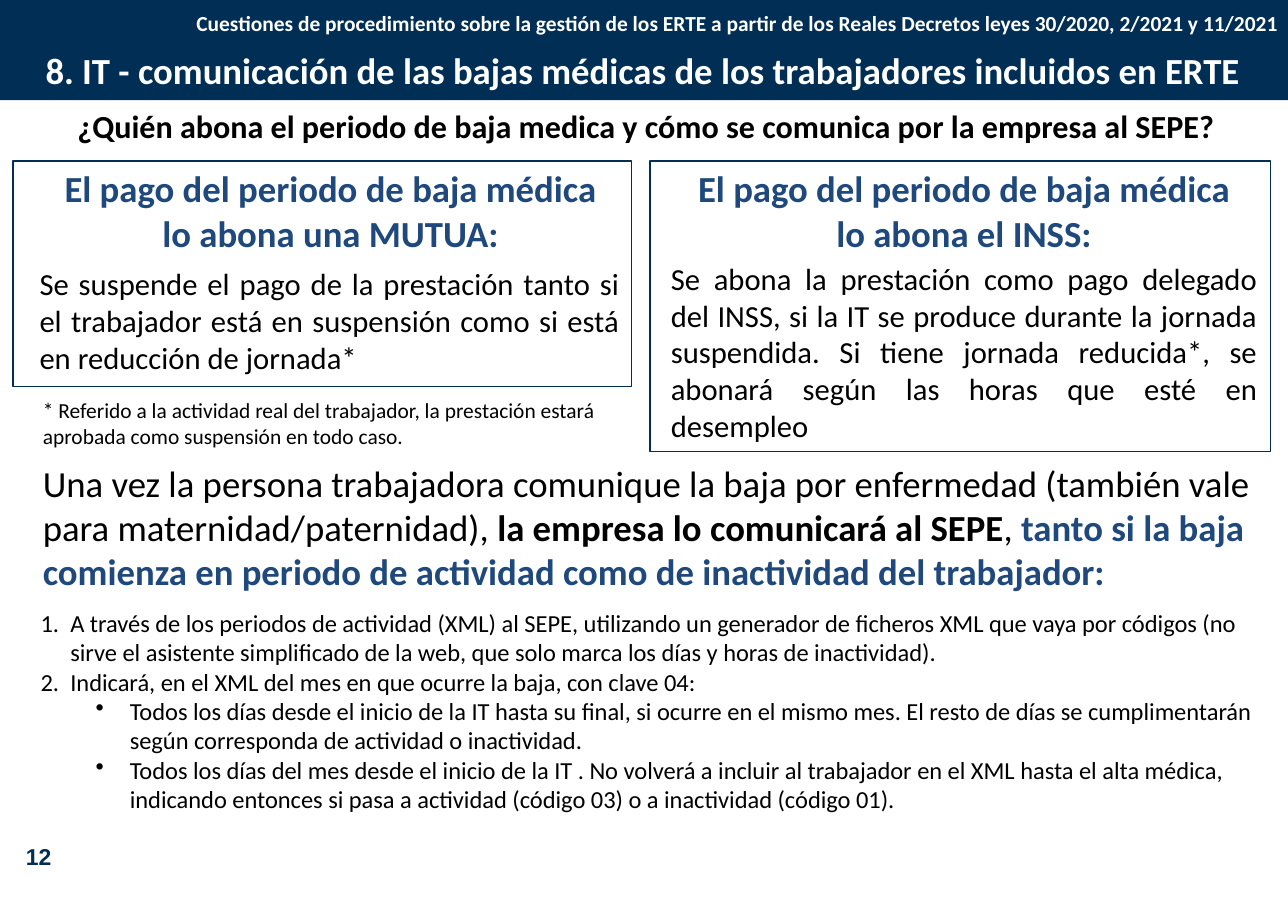
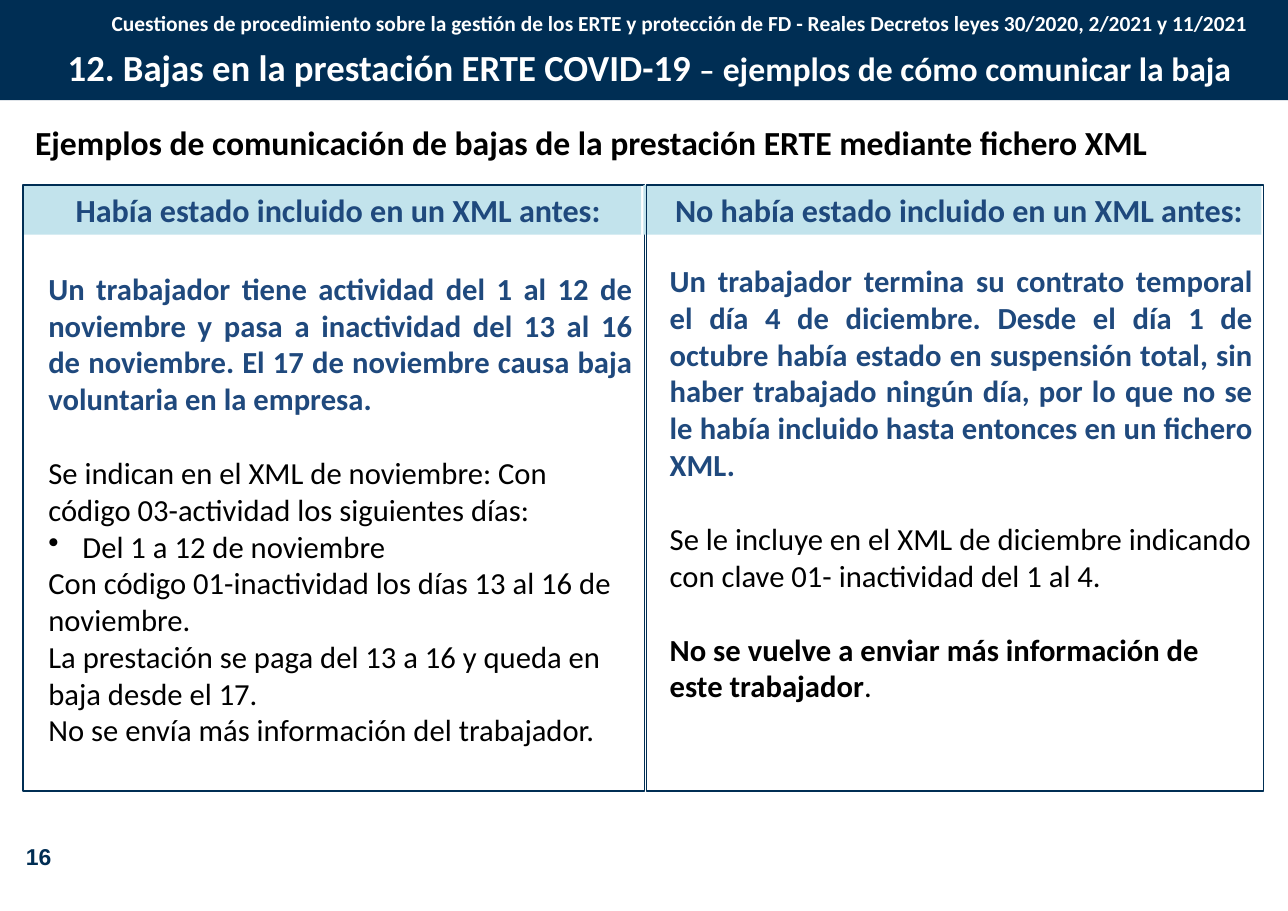
import lxml.etree
import pptx
import pptx.dml.color
import pptx.enum.shapes
import pptx.enum.text
import pptx.oxml.ns
import pptx.util

COLOURS = {"navy": "002E54", "blue": "1F497D", "sky": "C2E3EC", "white": "FFFFFF", "black": "000000"}
ALIGN = pptx.enum.text.PP_ALIGN
ANCHOR = pptx.enum.text.MSO_ANCHOR


class Deck:
    """Hold the shared style and the current slide, and draw each kind of element."""

    SCALE = 9144
    WIDTH, HEIGHT = 1169, 827
    STYLE = {"size": 20, "name": "Calibri", "bold": False, "colour": "black"}
    BULLETS = {"number": ("buAutoNum", "type", "arabicPeriod"), "dot": ("buChar", "char", "•")}

    def __init__(self):
        self.presentation = pptx.Presentation()
        self.presentation.slide_width = self.emu(self.WIDTH)
        self.presentation.slide_height = self.emu(self.HEIGHT)
        self.slide = None

    def emu(self, pixels):
        return pptx.util.Emu(pixels * self.SCALE)

    def colour(self, name):
        return pptx.dml.color.RGBColor.from_string(COLOURS[name])

    def place(self, shape, box):
        for name, value in zip(("left", "top", "width", "height"), box):
            setattr(shape, name, self.emu(value))

    def start(self, title, title_box, header, header_width, number):
        self.slide = self.presentation.slides.add_slide(self.presentation.slide_layouts[5])
        band = self.rectangle((0, 0, self.WIDTH, 91), fill="navy")
        self.slide.shapes.element.insert(2, band.element)
        heading = {"colour": "white", "bold": True}
        self.place(self.slide.shapes.title, title_box)
        self.set_text(self.slide.shapes.title, [title], margins=(13, 6, 13, 6), size=24, align=ALIGN.CENTER, **heading)
        self.text((0, 3, header_width, 36), [header], margins=(8, 6, 8, 6), size=14, align=ALIGN.RIGHT, **heading)
        page = self.rectangle((0, 755, 70, 44), fill="white")
        self.set_text(page, [number], margins=(12, 6, 12, 6), anchor=ANCHOR.MIDDLE, align=ALIGN.CENTER,
                      size=15, name="Arial", bold=True, colour="navy")

    def rectangle(self, box, fill=None, line=None):
        shape = self.slide.shapes.add_shape(
            pptx.enum.shapes.MSO_SHAPE.RECTANGLE, *[self.emu(value) for value in box])
        shape.shadow.inherit = False
        if fill:
            shape.fill.solid()
            shape.fill.fore_color.rgb = self.colour(fill)
        else:
            shape.fill.background()
        if line:
            shape.line.color.rgb = self.colour(line)
            shape.line.width = pptx.util.Pt(1)
        else:
            shape.line.fill.background()
        return shape

    def text(self, box, paragraphs, **style):
        shape = self.slide.shapes.add_textbox(*[self.emu(value) for value in box])
        self.set_text(shape, paragraphs, **style)

    def bar(self, box, words, **style):
        self.set_text(self.rectangle(box, fill="sky"), [words], **style)

    def set_text(self, shape, paragraphs, margins=(10, 5, 10, 5), anchor=ANCHOR.TOP, **style):
        frame = shape.text_frame
        values = {"word_wrap": True, "auto_size": pptx.enum.text.MSO_AUTO_SIZE.NONE, "vertical_anchor": anchor}
        sides = ("margin_left", "margin_top", "margin_right", "margin_bottom")
        values.update(zip(sides, map(self.emu, margins)))
        for name, value in values.items():
            setattr(frame, name, value)
        for index, item in enumerate(paragraphs):
            runs, changes = item if isinstance(item, tuple) else (item, {})
            paragraph = frame.add_paragraph() if index else frame.paragraphs[0]
            self.fill_paragraph(paragraph, runs, {**self.STYLE, **style, **changes})

    def fill_paragraph(self, paragraph, runs, style):
        properties = paragraph._p.get_or_add_pPr()
        properties.set("marL", str(self.emu(style.get("indent", 0))))
        properties.set("indent", str(-self.emu(style.get("hanging", 0))))
        if "bullet" in style:
            tag, attribute, value = self.BULLETS[style["bullet"]]
            bullet = lxml.etree.SubElement(properties, pptx.oxml.ns.qn("a:" + tag))
            bullet.set(attribute, value)
        values = {
            "alignment": style.get("align", ALIGN.LEFT),
            "level": style.get("level", 0),
            "space_before": pptx.util.Pt(style.get("before", 0)),
        }
        for name, value in values.items():
            setattr(paragraph, name, value)
        for part in [runs] if isinstance(runs, str) else runs:
            words, changes = part if isinstance(part, tuple) else (part, {})
            self.add_run(paragraph, words, {**style, **changes})

    def add_run(self, paragraph, words, style):
        run = paragraph.add_run()
        run.text = words
        values = {"size": pptx.util.Pt(style["size"]), "name": style["name"], "bold": style["bold"]}
        for name, value in values.items():
            setattr(run.font, name, value)
        run.font.color.rgb = self.colour(style["colour"])


STRONG = {"colour": "blue", "bold": True}
HEADING = {**STRONG, "align": ALIGN.CENTER, "indent": 12}
JUSTIFIED = {"align": ALIGN.JUSTIFY, "indent": 12}
CASE = {**STRONG, **JUSTIFIED}
GAP = {"before": 24.4}
NUMBERED = {"indent": 39, "hanging": 27, "bullet": "number"}
DOTTED = {"indent": 93, "hanging": 31, "bullet": "dot", "level": 1}


def sick_leave(deck):
    """Build the slide on reporting sick leave."""
    deck.start("8. IT - comunicación de las bajas médicas de los trabajadores incluidos en ERTE",
               (0, 37, 1167, 53),
               "Cuestiones de procedimiento sobre la gestión de los ERTE a partir de los "
               "Reales Decretos leyes 30/2020, 2/2021 y 11/2021", 1169, "12")
    deck.text((4, 91, 1165, 48),
              ["¿Quién abona el periodo de baja medica y cómo se comunica por la empresa al SEPE?"],
              margins=(13, 6, 13, 6), size=21, bold=True, align=ALIGN.CENTER)
    payers = [
        ("lo abona una MUTUA:", (15, 146, 558, 91), (14, 236, 558, 111), (12, 146, 561, 205),
         "Se suspende el pago de la prestación tanto si el trabajador está en suspensión como si está "
         "en reducción de jornada*"),
        ("lo abona el INSS:", (587, 146, 564, 91), (587, 231, 564, 178), (590, 146, 563, 264),
         "Se abona la prestación como pago delegado del INSS, si la IT se produce durante la jornada "
         "suspendida. Si tiene jornada reducida*, se abonará según las horas que esté en desempleo"),
    ]
    for payer, heading_box, body_box, frame_box, body in payers:
        deck.text(heading_box, ["El pago del periodo de baja médica", payer], size=24, **HEADING)
        deck.text(body_box, [body], **JUSTIFIED)
        deck.rectangle(frame_box, line="navy")
    deck.text((17, 356, 558, 57),
              ["* Referido a la actividad real del trabajador, la prestación estará aprobada como "
               "suspensión en todo caso."], size=14, indent=12)
    deck.text((17, 413, 1152, 131), [[
        "Una vez la persona trabajadora comunique la baja por enfermedad (también vale para "
        "maternidad/paternidad), ",
        ("la empresa lo comunicará al SEPE", {"bold": True}),
        ", ",
        ("tanto si la baja comienza en periodo de actividad como de inactividad del trabajador:", STRONG),
    ]], size=24, indent=12)
    deck.text((15, 547, 1136, 199), [
        ("A través de los periodos de actividad (XML) al SEPE, utilizando un generador de ficheros XML "
         "que vaya por códigos (no sirve el asistente simplificado de la web, que solo marca los días y "
         "horas de inactividad).", NUMBERED),
        ("Indicará, en el XML del mes en que ocurre la baja, con clave 04:", NUMBERED),
        ("Todos los días desde el inicio de la IT hasta su final, si ocurre en el mismo mes. El resto de "
         "días se cumplimentarán según corresponda de actividad o inactividad.", DOTTED),
        ("Todos los días del mes desde el inicio de la IT . No volverá a incluir al trabajador en el XML "
         "hasta el alta médica, indicando entonces si pasa a actividad (código 03) o a inactividad "
         "(código 01).", DOTTED),
    ], size=16)


def leaving_examples(deck):
    """Build the slide with examples of reporting the end of the benefit."""
    deck.start(["12. Bajas en la prestación ERTE COVID-19 ", ("–", {"size": 20}), " ",
                ("ejemplos de cómo comunicar la baja", {"size": 22})],
               (10, 35, 1159, 53),
               "Cuestiones de procedimiento sobre la gestión de los ERTE y protección de FD - "
               "Reales Decretos leyes 30/2020, 2/2021 y 11/2021", 1141, "16")
    deck.text((22, 106, 1124, 47),
              ["Ejemplos de comunicación de bajas de la prestación ERTE mediante fichero XML"],
              size=22, bold=True)
    examples = [
        ("Había estado incluido en un XML antes:",
         (20, 168, 562, 45), (22, 240, 562, 448), (21, 168, 564, 550), [
             ("Un trabajador tiene actividad del 1 al 12 de noviembre y pasa a inactividad del 13 al 16 "
              "de noviembre. El 17 de noviembre causa baja voluntaria en la empresa.", CASE),
             ("Se indican en el XML de noviembre: Con código 03-actividad los siguientes días:", GAP),
             ("Del 1 a 12 de noviembre", {"indent": 43, "hanging": 31, "bullet": "dot"}),
             "Con código 01-inactividad los días 13 al 16 de noviembre.",
             "La prestación se paga del 13 a 16 y queda en baja desde el 17.",
             "No se envía más información del trabajador.",
         ]),
        ("No había estado incluido en un XML antes:",
         (584, 168, 561, 45), (586, 233, 561, 414), (587, 168, 560, 550), [
             ("Un trabajador termina su contrato temporal el día 4 de diciembre. Desde el día 1 de "
              "octubre había estado en suspensión total, sin haber trabajado ningún día, por lo que no "
              "se le había incluido hasta entonces en un fichero XML.", CASE),
             ("Se le incluye en el XML de diciembre indicando con clave 01- inactividad del 1 al 4.", GAP),
             ([("No se vuelve a enviar más información de este trabajador", {"bold": True}), "."], GAP),
         ]),
    ]
    for heading, bar_box, body_box, frame_box, body in examples:
        deck.bar(bar_box, heading, size=21, **HEADING)
        deck.text(body_box, body, indent=12)
        deck.rectangle(frame_box, line="navy")


def main():
    """Build both slides and save the file."""
    deck = Deck()
    sick_leave(deck)
    leaving_examples(deck)
    deck.presentation.save("out.pptx")


if __name__ == "__main__":
    main()
